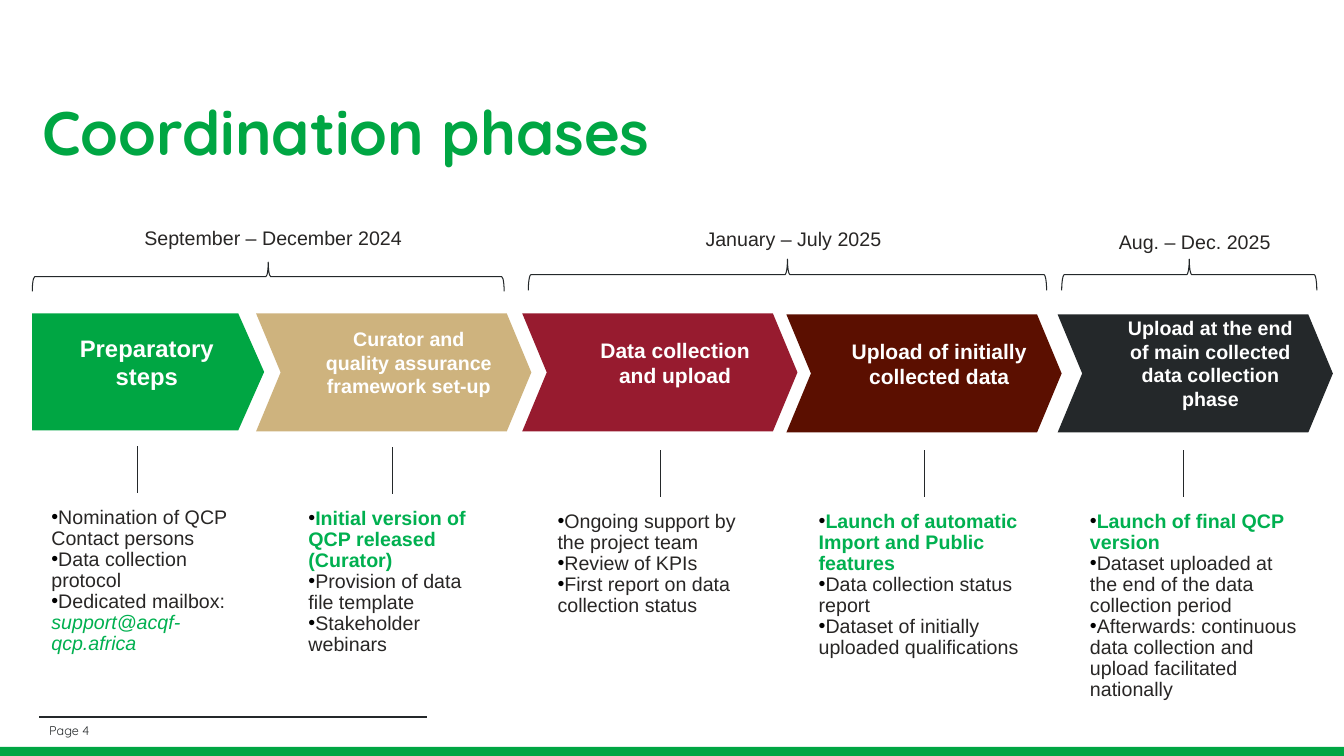
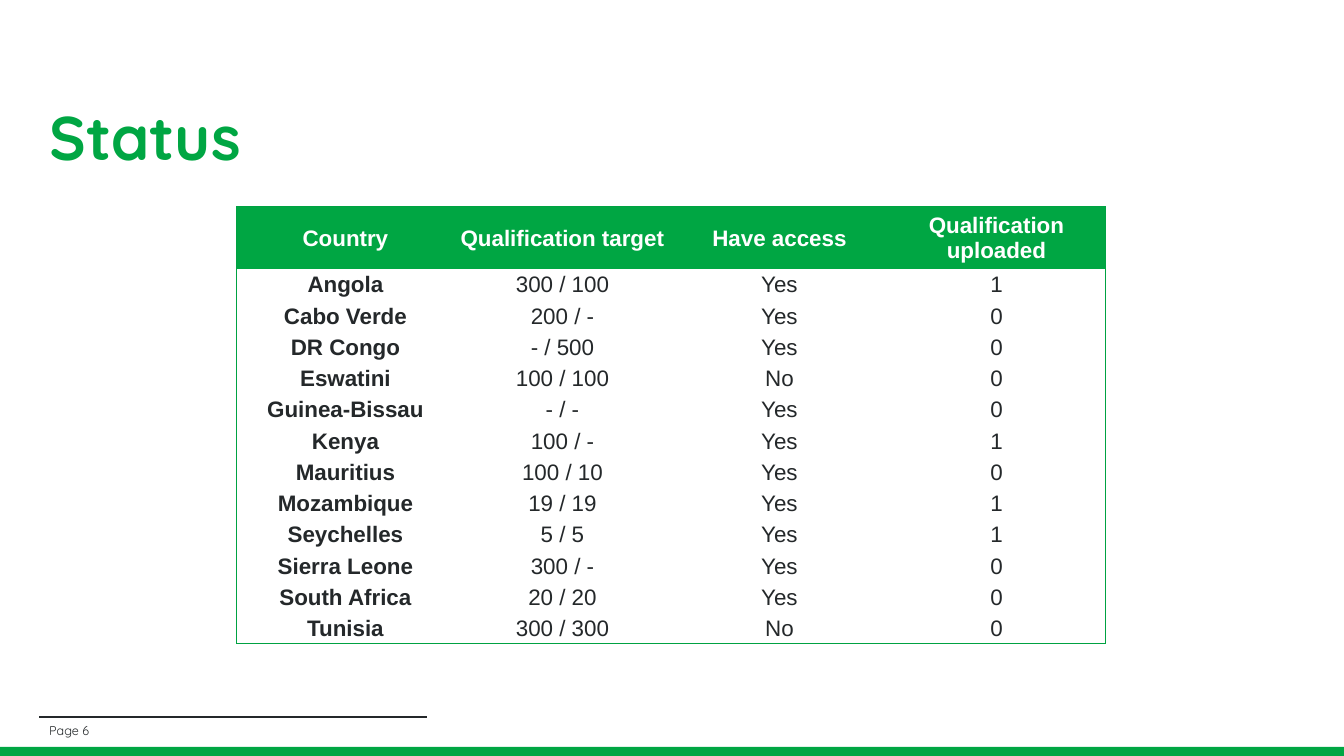
from dataclasses import dataclass

from pptx import Presentation
from pptx.dml.color import RGBColor
from pptx.enum.shapes import MSO_CONNECTOR, MSO_SHAPE
from pptx.enum.text import MSO_ANCHOR, MSO_AUTO_SIZE, PP_ALIGN
from pptx.oxml.ns import qn
from pptx.util import Inches, Pt
from lxml.etree import SubElement, Element


@dataclass(frozen=True)
class Theme:
    green: str = "00A643"
    border: str = "00A242"
    accent: str = "00B050"
    tan: str = "CEB37E"
    crimson: str = "971B2F"
    maroon: str = "5B0F00"
    dark: str = "24282A"
    text: str = "282625"
    black: str = "000000"
    white: str = "FFFFFF"
    head_font: str = "Quicksand"
    body_font: str = "Arial"
    title: int = 44
    table: int = 16
    body: int = 14
    footer: int = 9


T = Theme()
LIST_SPACING = 0.89


@dataclass(frozen=True)
class Item:
    text: str
    strong: bool = False
    email: str = ""


@dataclass(frozen=True)
class Phase:
    name: str
    fill: str
    size: int
    box: tuple[float, float, float, float]
    stem: tuple[float, float]            # x, top
    notes: tuple[float, float, float, float]
    inset: float
    items: tuple[Item, ...]
    kind: MSO_SHAPE = MSO_SHAPE.CHEVRON
    point: float = 0.208
    pad: float = 0.4


@dataclass(frozen=True)
class Period:
    label: str
    box: tuple[float, float, float, float]
    brace: tuple[float, float, float, float]  # left, top, length, depth


PHASES = (
    Phase("Preparatory steps", T.green, 17, (0.32, 3.11, 2.3, 1.16), (1.36, 4.42),
          (-0.02, 4.99, 2.93, 1.6), 0.53,
          (Item("Nomination of QCP Contact persons"),
           Item("Data collection protocol"),
           Item("Dedicated mailbox: ", email="support@acqf-qcp.africa")),
          MSO_SHAPE.PENTAGON, 0.221, 0.2),
    Phase("Curator and quality assurance framework set-up", T.tan, 14,
          (2.54, 3.11, 2.73, 1.17), (3.89, 4.43), (2.53, 5, 2.74, 1.6), 0.53,
          (Item("Initial version of QCP released (Curator)", True),
           Item("Provision of data file template"),
           Item("Stakeholder webinars"))),
    Phase("Data collection and upload", T.crimson, 15,
          (5.18, 3.11, 2.73, 1.17), (6.55, 4.46), (5, 5.03, 3.07, 1.2), 0.53,
          (Item("Ongoing support by the project team"),
           Item("Review of KPIs"),
           Item("First report on data collection status"))),
    Phase("Upload of initially collected data", T.maroon, 15,
          (7.8, 3.12, 2.73, 1.17), (9.17, 4.46), (7.63, 5.03, 3.07, 2.08), 0.49,
          (Item("Launch of automatic Import and Public features", True),
           Item("Data collection status report"),
           Item("Dataset of initially uploaded qualifications"))),
    Phase("Upload at the end of main collected data collection phase", T.dark, 14,
          (10.49, 3.12, 2.73, 1.17), (11.74, 4.46), (10.32, 5.03, 3.15, 2.08), 0.49,
          (Item("Launch of final QCP version", True),
           Item("Dataset uploaded at the end of the data collection period"),
           Item("Afterwards: continuous data collection and upload "
                "facilitated nationally"))),
)

PERIODS = (
    Period("September – December 2024", (0.42, 2.22, 4.58, 0.38), (0.32, 2.6, 4.68, 0.29)),
    Period("January – July 2025", (5.3, 2.23, 5.14, 0.38), (5.24, 2.57, 5.14, 0.31)),
    Period("Aug. – Dec. 2025", (10.32, 2.26, 3.06, 0.31), (10.53, 2.57, 2.53, 0.31)),
)

STATUS = (
    ("Country", "Qualification target", "Have access", "Qualification uploaded"),
    ("Angola", "300 / 100", "Yes", "1"),
    ("Cabo Verde", "200 / -", "Yes", "0"),
    ("DR Congo", "- / 500", "Yes", "0"),
    ("Eswatini", "100 / 100", "No", "0"),
    ("Guinea-Bissau", "- / -", "Yes", "0"),
    ("Kenya", "100 / -", "Yes", "1"),
    ("Mauritius", "100 / 10", "Yes", "0"),
    ("Mozambique", "19 / 19", "Yes", "1"),
    ("Seychelles", "5 / 5", "Yes", "1"),
    ("Sierra Leone", "300 / -", "Yes", "0"),
    ("South Africa", "20 / 20", "Yes", "0"),
    ("Tunisia", "300 / 300", "No", "0"),
)


# Text helpers
def inches(values) -> list:
    return [Inches(v) for v in values]


def add_run(p, text: str, size: int, color: str, **fmt):
    r = p.add_run()
    r.text = text
    values = {"name": T.body_font, "size": Pt(size), "bold": False} | fmt
    for key, value in values.items():
        setattr(r.font, key, value)
    r.font.color.rgb = RGBColor.from_string(color)


def set_frame(tf, insets=(0.1, 0.05, 0.1, 0.05), anchor=MSO_ANCHOR.TOP):
    left, top, right, bottom = inches(insets)
    values = {"word_wrap": True, "auto_size": MSO_AUTO_SIZE.NONE,
              "vertical_anchor": anchor, "margin_left": left, "margin_top": top,
              "margin_right": right, "margin_bottom": bottom}
    for key, value in values.items():
        setattr(tf, key, value)


def add_text_box(slide, box, **frame):
    tf = slide.shapes.add_textbox(*inches(box)).text_frame
    set_frame(tf, **frame)
    return tf


def add_bullet(p, color: str):
    pPr = p._p.get_or_add_pPr()
    pPr.set("marL", "0")
    pPr.set("indent", "0")
    SubElement(SubElement(pPr, qn("a:buClr")), qn("a:srgbClr")).set("val", color)
    SubElement(pPr, qn("a:buFont")).set("typeface", T.body_font)
    SubElement(pPr, qn("a:buChar")).set("char", "•")


# Shape helpers
def add_filled(slide, kind, box, fill: str):
    sp = slide.shapes.add_shape(kind, *inches(box))
    sp.shadow.inherit = False
    sp.fill.solid()
    sp.fill.fore_color.rgb = RGBColor.from_string(fill)
    sp.line.fill.background()
    return sp


def add_line(slide, start, end, width: float):
    line = slide.shapes.add_connector(MSO_CONNECTOR.STRAIGHT, *inches(start + end))
    line.line.color.rgb = RGBColor.from_string(T.dark)
    line.line.width = Pt(width)
    SubElement(line.element.spPr, qn("a:effectLst"))
    return line


# Shared slide parts
def add_layout_bands(layout, slide):
    """Green band and footer rule, kept on the layout."""
    band = add_filled(slide, MSO_SHAPE.RECTANGLE, (-0.03, 7.41, 13.4, 0.13), T.green)
    rule = add_line(slide, (0.39, 7.11), (4.24, 7.11), 1.5)
    for sp in (band, rule):
        layout.shapes.element.append(sp.element)


def add_title_and_page(slide, title: str, box, page: int):
    sp = slide.shapes.title
    sp.left, sp.top, sp.width, sp.height = inches(box)
    set_frame(sp.text_frame, anchor=MSO_ANCHOR.MIDDLE)
    p = sp.text_frame.paragraphs[0]
    p.alignment, p.line_spacing = PP_ALIGN.LEFT, 0.9
    add_run(p, title, T.title, T.green, name=T.head_font, bold=True)
    tf = add_text_box(slide, (0.39, 7.16, 4, 0.18), anchor=MSO_ANCHOR.MIDDLE)
    add_run(tf.paragraphs[0], f"Page {page}", T.footer, T.dark, name=T.head_font)


# Phase slide
def add_phase(slide, phase: Phase):
    sp = add_filled(slide, phase.kind, phase.box, phase.fill)
    sp.adjustments[0] = phase.point
    set_frame(sp.text_frame, (phase.pad, 0, 0.1, 0.2), MSO_ANCHOR.MIDDLE)
    p = sp.text_frame.paragraphs[0]
    p.alignment = PP_ALIGN.CENTER
    add_run(p, phase.name, phase.size, T.white, bold=True)

    x, top = phase.stem
    add_line(slide, (x, top + 0.47), (x, top), 0.75)

    tf = add_text_box(slide, phase.notes, insets=(phase.inset, 0.05, 0.53, 0.13))
    for i, item in enumerate(phase.items):
        p = tf.add_paragraph() if i else tf.paragraphs[0]
        add_bullet(p, T.black)
        p.line_spacing = LIST_SPACING
        add_run(p, item.text, T.body, T.accent if item.strong else T.text,
                bold=item.strong)
        if item.email:
            add_run(p, item.email, T.body, T.accent, italic=True)


def add_period(slide, period: Period):
    left, top, length, depth = period.brace
    # The brace is upright before its quarter turn about the centre
    shift = (length - depth) / 2
    sp = slide.shapes.add_shape(
        MSO_SHAPE.LEFT_BRACE, *inches((left + shift, top - shift, depth, length)))
    sp.rotation = 90
    sp.shadow.inherit = False
    sp.fill.background()
    sp.line.color.rgb = RGBColor.from_string(T.dark)
    sp.line.width = Pt(0.75)

    tf = add_text_box(slide, period.box, insets=(0.53, 0.05, 0.53, 0.13))
    p = tf.paragraphs[0]
    p.alignment, p.line_spacing = PP_ALIGN.CENTER, LIST_SPACING
    add_run(p, period.label, T.body, T.text)


# Status table
def set_borders(cell, sides: list[str]):
    tcPr = cell._tc.get_or_add_tcPr()
    for i, side in enumerate(sides):
        ln = Element(qn(f"a:ln{side}"), w=str(Pt(0.75)))
        fill = SubElement(ln, qn("a:solidFill"))
        SubElement(fill, qn("a:srgbClr")).set("val", T.border)
        tcPr.insert(i, ln)


def add_status_table(slide, rows):
    n_rows, n_cols = len(rows), len(rows[0])
    frame = slide.shapes.add_table(n_rows, n_cols, *inches((2.35, 2.05, 8.61, 4.35)))
    plain_style = "{2D5ABB26-0587-4C30-8999-92F81FD0307C}"
    for style_id in frame.element.iter(qn("a:tableStyleId")):
        style_id.text = plain_style
    table = frame.table
    table.horz_banding = False
    for i, row in enumerate(rows):
        table.rows[i].height = Inches(0.31 if i else 0.62)
        for j, text in enumerate(row):
            cell = table.cell(i, j)
            cell.vertical_anchor = MSO_ANCHOR.MIDDLE
            for side in ("left", "top", "right"):
                setattr(cell, f"margin_{side}", Inches(0.01))
            cell.margin_bottom = 0
            if i:
                cell.fill.background()
            else:
                cell.fill.solid()
                cell.fill.fore_color.rgb = RGBColor.from_string(T.green)
            edges = {"L": j == 0, "R": j == n_cols - 1, "T": i == 0, "B": i == n_rows - 1}
            set_borders(cell, [side for side, outer in edges.items() if outer])
            p = cell.text_frame.paragraphs[0]
            p.alignment = PP_ALIGN.CENTER
            add_run(p, text, T.table, T.dark if i else T.white, bold=i == 0 or j == 0)


def main():
    prs = Presentation()
    prs.slide_width, prs.slide_height = Inches(13.33), Inches(7.5)
    layout = prs.slide_layouts.get_by_name("Title Only")

    s = prs.slides.add_slide(layout)
    add_layout_bands(layout, s)
    add_title_and_page(s, "Coordination phases", (0.32, 0.71, 12.54, 1.26), 4)
    for phase in PHASES:
        add_phase(s, phase)
    for period in PERIODS:
        add_period(s, period)

    s = prs.slides.add_slide(layout)
    add_title_and_page(s, "Status", (0.39, 0.67, 12.54, 1.45), 6)
    add_status_table(s, STATUS)

    prs.save("out.pptx")


if __name__ == "__main__":
    main()
